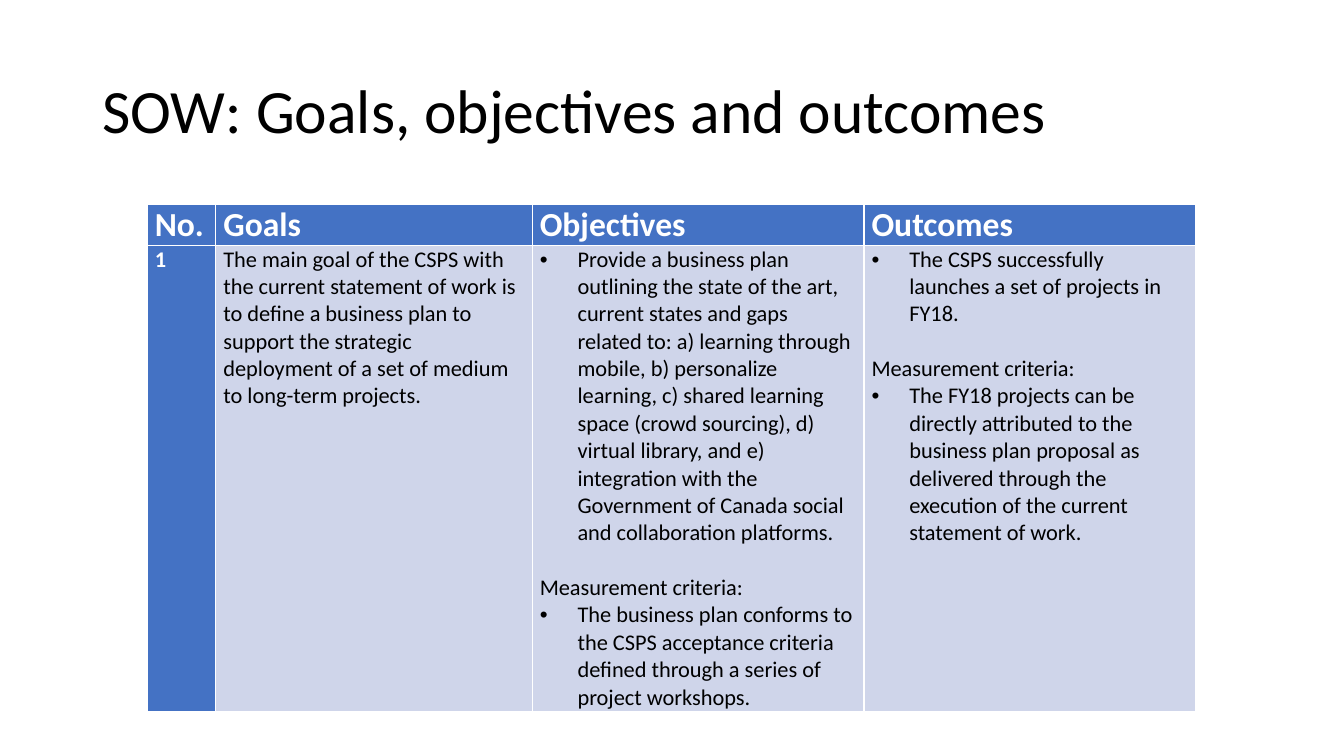
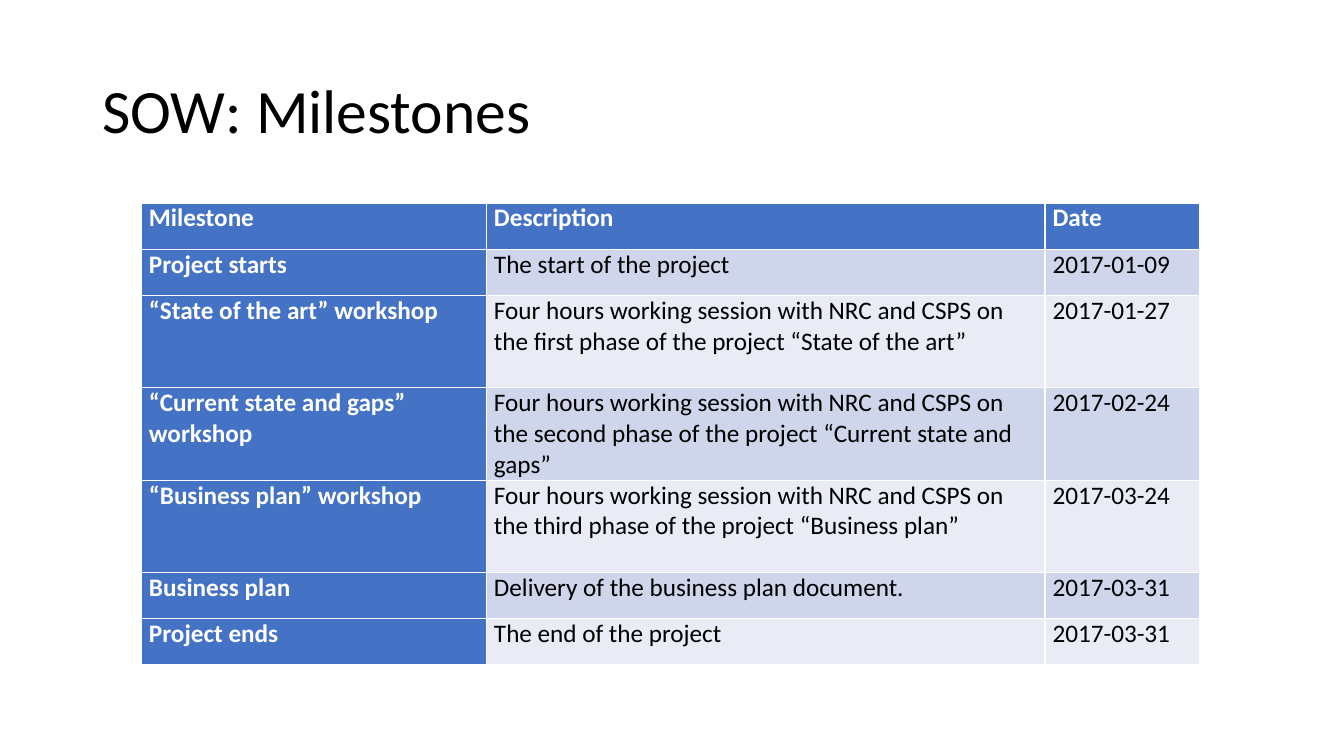
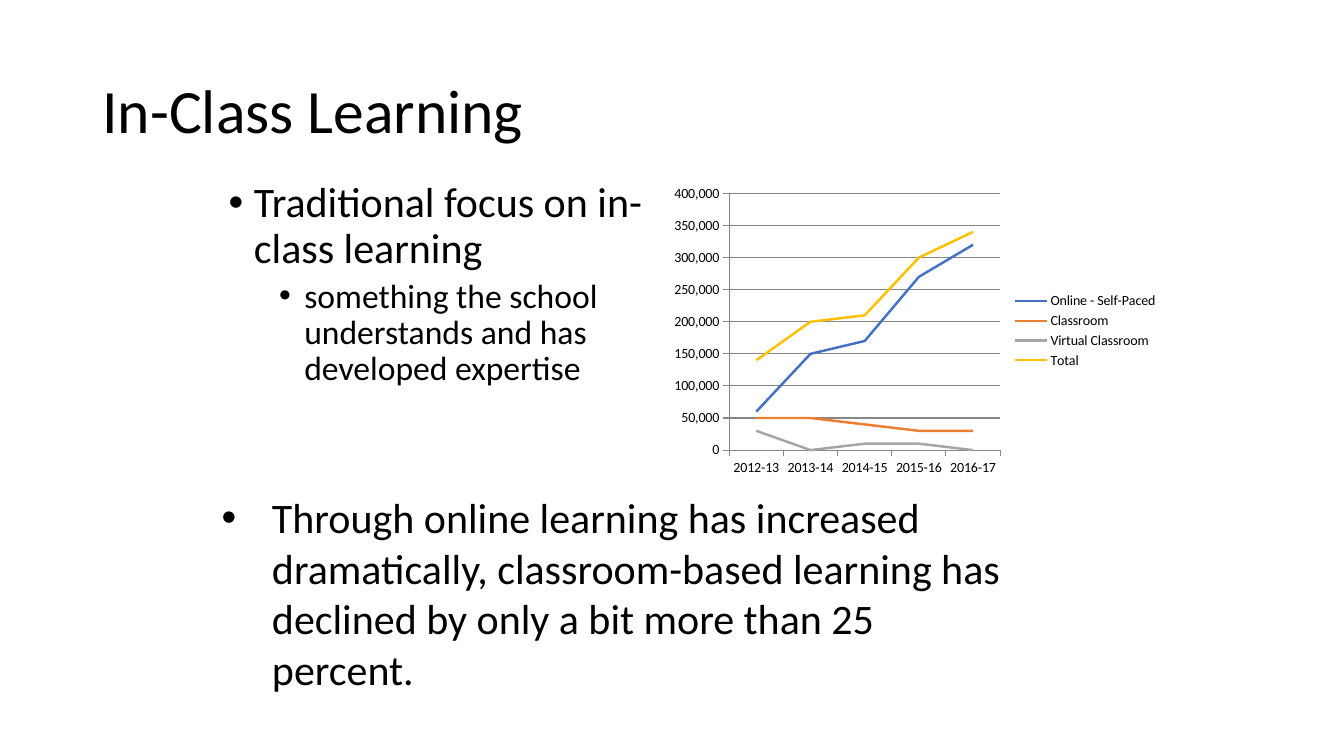
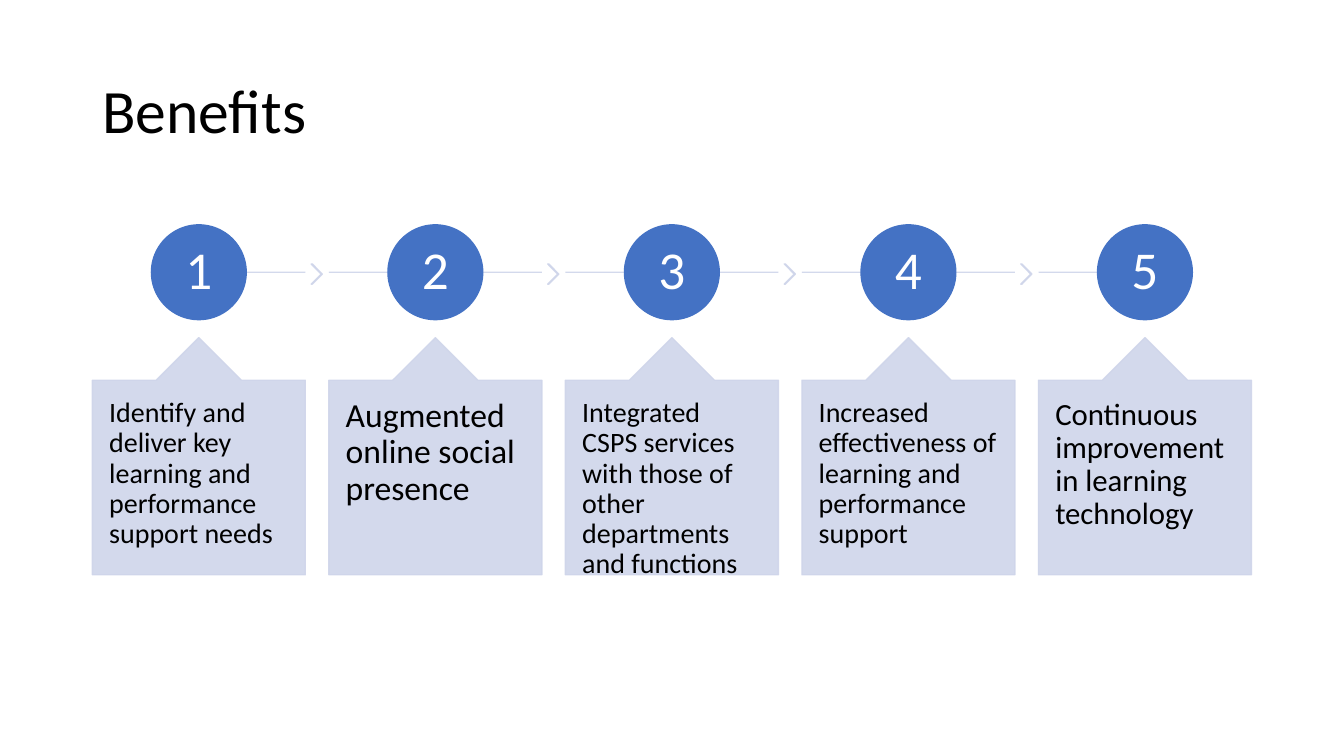
"""Builds the four slides on the statement of work, learning trends and benefits."""
from lxml import etree
from pptx import Presentation
from pptx import util as u
from pptx.chart import data as chart_data
from pptx.dml import color as colors
from pptx.enum import chart as charts, shapes, text
from pptx.oxml import ns

FONT = "Calibri"
BLACK, WHITE, BLUE = "000000", "FFFFFF", "4472C4"
BAND, PALE, GRID = "CFD5EA", "E9EBF5", "868686"
TITLE_AT = (66, 28.8, 828, 104.4)

ITEM = {"bullet": True, "left": 27, "hang": 27}
GAP = {"before": 19.5}
GOALS = {
    "title": "SOW: Goals, objectives and outcomes",
    "at": (105.2, 146.2), "widths": (49, 226, 237, 237), "heights": (29.2, 332),
    "head_size": 24, "size": 16,
    "rows": [
        ["No.", "Goals", "Objectives", "Outcomes"],
        ["1",
         "The main goal of the CSPS with the current statement of work is to define a business plan "
         "to support the strategic deployment of a set of medium to long-term projects.",
         [("Provide a business plan outlining the state of the art, current states and gaps related to: "
           "a) learning through mobile, b) personalize learning, c) shared learning space "
           "(crowd sourcing), d) virtual library, and e) integration with the Government of Canada "
           "social and collaboration platforms.", ITEM),
          ("Measurement criteria:", GAP),
          ("The business plan conforms to the CSPS acceptance criteria defined through a series of "
           "project workshops.", ITEM)],
         [("The CSPS successfully launches a set of projects in FY18.", ITEM),
          ("Measurement criteria:", GAP),
          ("The FY18 projects can be directly attributed to the business plan proposal as delivered "
           "through the execution of the current statement of work.", ITEM)]],
    ],
}
MILESTONES = {
    "title": "SOW: Milestones",
    "at": (101, 145), "widths": (246.5, 399, 110.5), "heights": (33, 33, 66, 66, 66, 33, 33),
    "head_size": 18, "size": 18,
    "rows": [
        ["Milestone", "Description", "Date"],
        ["Project starts", "The start of the project", "2017-01-09"],
        ["“State of the art” workshop",
         "Four hours working session with NRC and CSPS on the first phase of the project "
         "“State of the art”", "2017-01-27"],
        ["“Current state and gaps” workshop",
         "Four hours working session with NRC and CSPS on the second phase of the project "
         "“Current state and gaps”", "2017-02-24"],
        ["“Business plan” workshop",
         "Four hours working session with NRC and CSPS on the third phase of the project "
         "“Business plan”", "2017-03-24"],
        ["Business plan", "Delivery of the business plan document.", "2017-03-31"],
        ["Project ends", "The end of the project", "2017-03-31"],
    ],
}
FOCUS = [
    ("Traditional focus on in-class learning",
     {"size": 30, "before": 10, "left": 18, "hang": 18}),
    ("something the school understands and has developed expertise",
     {"size": 24, "before": 5, "left": 54, "hang": 18, "level": 1}),
]
FINDING = ("Through online learning has increased dramatically, classroom-based learning has "
           "declined by only a bit more than 25 percent.")
YEARS = ["2012-13", "2013-14", "2014-15", "2015-16", "2016-17"]
LEARNERS = [
    ("Online - Self-Paced", BLUE, (60000, 150000, 170000, 270000, 320000)),
    ("Classroom", "ED7D31", (50000, 50000, 40000, 30000, 30000)),
    ("Virtual Classroom", "A5A5A5", (30000, 0, 10000, 10000, 0)),
    ("Total", "FFC000", (140000, 200000, 210000, 300000, 340000)),
]
BENEFITS = [
    ("Identify and deliver key learning and performance support needs", 20),
    ("Augmented online social presence", 24),
    ("Integrated CSPS services with those of other departments and functions", 20),
    ("Increased effectiveness of learning and performance support", 20),
    ("Continuous improvement in learning technology", 22),
]


def rgb(value):
    """Turn a hex string into a colour."""
    return colors.RGBColor.from_string(value)


def points(values):
    """Turn numbers into lengths in points."""
    return [u.Pt(value) for value in values]


def write(frame, lines, size=18, color=BLACK, bold=False, **shared):
    """Fill a text frame with a string or with (text, format) lines."""
    if isinstance(lines, str):
        lines = [(lines, {})]
    for index, (words, own) in enumerate(lines):
        style = {**shared, **own}
        para = frame.add_paragraph() if index else frame.paragraphs[0]
        para.level = style.get("level", 0)
        para.alignment = style.get("align", text.PP_ALIGN.LEFT)
        para.line_spacing = style.get("spacing", 1.0)
        para.space_before = u.Pt(style.get("before", 0))
        if style.get("bullet"):
            props = para._p.get_or_add_pPr()
            props.set("marL", str(u.Pt(style["left"])))
            props.set("indent", str(-u.Pt(style["hang"])))
            etree.SubElement(props, ns.qn("a:buFont")).set("typeface", "Arial")
            etree.SubElement(props, ns.qn("a:buChar")).set("char", "•")
        span = para.add_run()
        span.text = words
        font = span.font
        font.name, font.size, font.bold = FONT, u.Pt(style.get("size", size)), bold
        font.color.rgb = rgb(color)


def place(shape, at):
    """Move and size a placeholder."""
    shape.left, shape.top, shape.width, shape.height = points(at)


def inset(holder, across, down):
    """Set equal side margins and equal top and bottom margins."""
    holder.margin_left = holder.margin_right = u.Pt(across)
    holder.margin_top = holder.margin_bottom = u.Pt(down)


def add_page(deck, title, layout=5):
    """Add a slide with the shared title style."""
    page = deck.slides.add_slide(deck.slide_layouts[layout])
    place(page.shapes.title, TITLE_AT)
    frame = page.shapes.title.text_frame
    frame.vertical_anchor = text.MSO_ANCHOR.MIDDLE
    write(frame, title, size=44, spacing=0.9)
    return page


def add_table_page(deck, content):
    """Add a slide with a table under a blue header row and first column."""
    page = add_page(deck, content["title"])
    rows, widths, heights = content["rows"], content["widths"], content["heights"]
    at = points((*content["at"], sum(widths), sum(heights)))
    table = page.shapes.add_table(len(rows), len(widths), *at).table
    table.first_col = True
    for column, width in zip(table.columns, widths):
        column.width = u.Pt(width)
    for row, height in zip(table.rows, heights):
        row.height = u.Pt(height)
    for r, row in enumerate(rows):
        for c, lines in enumerate(row):
            cell = table.cell(r, c)
            label = r == 0 or c == 0
            inset(cell, 5.4, 0)
            cell.fill.solid()
            cell.fill.fore_color.rgb = rgb(BLUE if label else BAND if r % 2 else PALE)
            write(cell.text_frame, lines, size=content["size" if r else "head_size"],
                  color=WHITE if label else BLACK, bold=label)


def add_learning_page(deck):
    """Add the slide with bullets and the line chart."""
    page = add_page(deck, "In-Class Learning", layout=1)
    body = page.placeholders[1]
    place(body, (156.2, 126, 318.3, 356.4))
    body.text_frame.auto_size = text.MSO_AUTO_SIZE.NONE
    write(body.text_frame, FOCUS, spacing=0.9, bullet=True)

    box = page.shapes.add_textbox(*points((151.2, 347.8, 586.8, 152.6)))
    box.text_frame.word_wrap = True
    write(box.text_frame, FINDING, size=30, bullet=True, left=36, hang=36)

    data = chart_data.CategoryChartData(number_format="#,##0")
    data.categories = YEARS
    for name, _, values in LEARNERS:
        data.add_series(name, values)
    chart = page.shapes.add_chart(charts.XL_CHART_TYPE.LINE,
                                  *points((474.5, 128.2, 360, 216)), data).chart
    chart.has_title = False
    chart.font.name, chart.font.size = FONT, u.Pt(10)
    chart.font.color.rgb = rgb(BLACK)
    chart.has_legend = True
    chart.legend.position = charts.XL_LEGEND_POSITION.RIGHT
    chart.legend.include_in_layout = False
    chart.plots[0].vary_by_categories = False
    scale = chart.value_axis
    scale.minimum_scale, scale.maximum_scale, scale.major_unit = 0, 400000, 50000
    scale.has_major_gridlines = True
    for line in (scale.format.line, chart.category_axis.format.line,
                 scale.major_gridlines.format.line):
        line.color.rgb = rgb(GRID)
        line.width = u.Pt(0.75)
    for series, (_, color, _) in zip(chart.plots[0].series, LEARNERS):
        series.smooth = False
        series.marker.style = charts.XL_MARKER_STYLE.NONE
        series.format.line.color.rgb = rgb(color)
        series.format.line.width = u.Pt(1.75)


def soften(shape):
    """Make the solid fill and line of a shape slightly transparent."""
    for tint in shape._element.spPr.iter(ns.qn("a:srgbClr")):
        etree.SubElement(tint, ns.qn("a:alpha")).set("val", "90000")


def add_shape(page, kind, at, color):
    """Add a preset shape with one colour and no shadow."""
    shape = page.shapes.add_shape(kind, *points(at))
    shape.shadow.inherit = False
    shape.fill.solid()
    shape.fill.fore_color.rgb = shape.line.color.rgb = rgb(color)
    shape.line.width = u.Pt(1)
    return shape


def add_benefits_page(deck):
    """Add the slide with five numbered steps."""
    page = add_page(deck, "Benefits")
    kinds = shapes.MSO_SHAPE
    width, pitch, circle, middle = 152.1, 168.95, 67.7, 194.5
    last = len(BENEFITS) - 1
    for index, (words, size) in enumerate(BENEFITS):
        left = 66 + index * pitch
        center = left + width / 2
        start = left if index else center
        end = left + width if index < last else center
        rail = page.shapes.add_connector(shapes.MSO_CONNECTOR.STRAIGHT,
                                         *points((start, middle, end, middle)))
        rail.line.color.rgb = rgb(BAND)
        rail.line.width = u.Pt(1)
        soften(rail)
        etree.SubElement(rail._element.spPr, ns.qn("a:effectLst"))
        if index < last:
            chevron = add_shape(page, kinds.CHEVRON, (left + 156.3, 188.6, 7.9, 14.4), BAND)
            chevron.adjustments[0] = 0.9
            soften(chevron)

        badge = add_shape(page, kinds.OVAL,
                          (center - circle / 2, middle - circle / 2, circle, circle), BLUE)
        inset(badge.text_frame, 2.9, 2.9)
        badge.text_frame.vertical_anchor = text.MSO_ANCHOR.MIDDLE
        write(badge.text_frame, str(index + 1), size=38, color=WHITE,
              align=text.PP_ALIGN.CENTER, spacing=0.9)

        callout = add_shape(page, kinds.UP_ARROW_CALLOUT, (left, 241.2, width, 169.4), BAND)
        for spot, value in enumerate((0.5, 0.2, 0.2, 1)):
            callout.adjustments[spot] = value
        soften(callout)
        inset(callout.text_frame, 12, 13)
        callout.text_frame.word_wrap = True
        callout.text_frame.vertical_anchor = text.MSO_ANCHOR.TOP
        write(callout.text_frame, words, size=size, spacing=0.9)


def main():
    """Build and save the deck."""
    deck = Presentation()
    deck.slide_width, deck.slide_height = points((960, 540))
    add_table_page(deck, GOALS)
    add_table_page(deck, MILESTONES)
    add_learning_page(deck)
    add_benefits_page(deck)
    deck.save("out.pptx")


if __name__ == "__main__":
    main()
